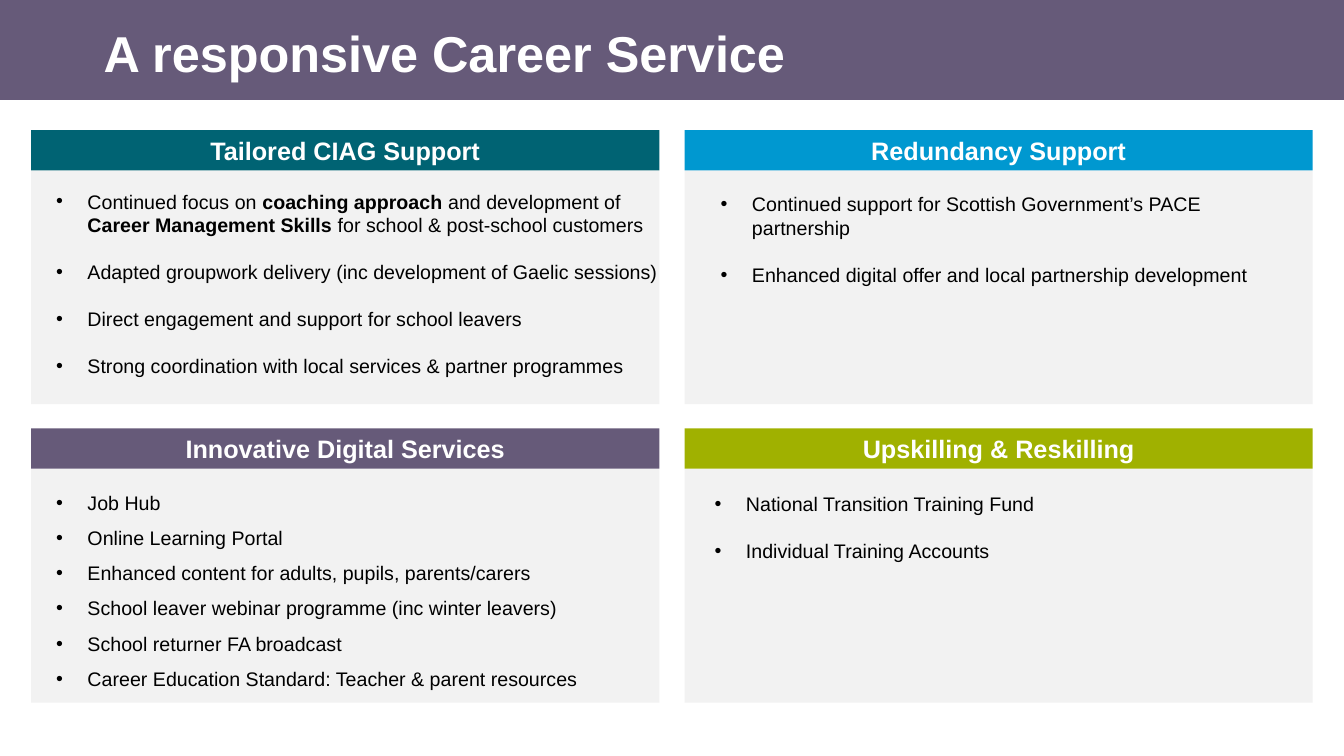
from dataclasses import dataclass
from pptx import Presentation
from pptx.dml.color import RGBColor
from pptx.enum.shapes import MSO_SHAPE
from pptx.enum.text import MSO_ANCHOR, PP_ALIGN
from pptx.oxml.xmlchemy import OxmlElement
from pptx.util import Inches, Pt


@dataclass(frozen=True)
class Theme:
    font: str = "Arial"
    title: int = 36
    head: int = 18
    body: int = 14
    gap: float = 16.8
    purple: str = "665A79"
    teal: str = "006373"
    blue: str = "0098D0"
    green: str = "A0B100"
    pale: str = "F2F2F2"
    white: str = "FFFFFF"
    black: str = "000000"


THEME = Theme()
WIDE, HEAD, BODY = 6.23, 0.4, 2.32
COLS, ROWS = (0.31, 6.79), (1.29, 4.25)
INDENT = Inches(0.31)
GAPPED = {"space_after": Pt(THEME.gap)}
LOOSE = {"line_spacing": 1.5}

PANELS = [
    (0, 0, "Tailored CIAG Support", THEME.teal, (0.46, 1.83, 6.33, 2.52), GAPPED, [
        "Continued focus on *coaching approach* and development of \n"
        "*Career Management Skills* for school & post-school customers",
        "Adapted groupwork delivery (inc development of Gaelic sessions)",
        "Direct engagement and support for school leavers",
        "Strong coordination with local services & partner programmes",
    ]),
    (1, 0, "Redundancy Support", THEME.blue, (7.05, 1.86, 5.97, 1.04), GAPPED, [
        "Continued support for Scottish Government’s PACE partnership",
        "Enhanced digital offer and local partnership development",
    ]),
    (0, 1, "Innovative Digital Services", THEME.purple, (0.46, 4.7, 6, 2.18), LOOSE, [
        "Job Hub",
        "Online Learning Portal",
        "Enhanced content for adults, pupils, parents/carers",
        "School leaver webinar programme (inc winter leavers)",
        "School returner FA broadcast",
        "Career Education Standard: Teacher & parent resources",
    ]),
    (1, 1, "Upskilling & Reskilling", THEME.green, (6.99, 4.83, 3.81, 0.81), GAPPED, [
        "National Transition Training Fund",
        "Individual Training Accounts",
    ]),
]


def style(item, values):
    for name, value in values.items():
        setattr(item, name, value)


def add_run(para, text, size, color, bold):
    run = para.add_run()
    run.text = text
    style(run.font, {"name": THEME.font, "size": Pt(size), "bold": bold})
    run.font.color.rgb = RGBColor.from_string(color)


def add_rect(slide, area, color):
    rect = slide.shapes.add_shape(MSO_SHAPE.RECTANGLE, *map(Inches, area))
    rect.shadow.inherit = False
    rect.fill.solid()
    rect.fill.fore_color.rgb = RGBColor.from_string(color)
    rect.line.fill.background()
    return rect


def add_text(slide, area, wrap):
    frame = slide.shapes.add_textbox(*map(Inches, area)).text_frame
    frame.word_wrap = wrap
    return frame


def add_head(slide, area, text, color):
    frame = add_rect(slide, area, color).text_frame
    style(frame, {"word_wrap": True, "vertical_anchor": MSO_ANCHOR.MIDDLE})
    para = frame.paragraphs[0]
    para.alignment = PP_ALIGN.CENTER
    add_run(para, text, THEME.head, THEME.white, True)


def add_bullet(para):
    props = para._p.get_or_add_pPr()
    for key, value in (("marL", INDENT), ("indent", -INDENT)):
        props.set(key, str(int(value)))
    for tag, key, value in (("a:buFont", "typeface", THEME.font),
                            ("a:buChar", "char", "•")):
        mark = OxmlElement(tag)
        mark.set(key, value)
        props.append(mark)


def add_list(slide, area, items, form):
    frame = add_text(slide, area, True)
    for spot, item in enumerate(items):
        para = frame.add_paragraph() if spot else frame.paragraphs[0]
        style(para, form)
        add_bullet(para)
        for row, line in enumerate(item.split("\n")):
            if row:
                para.add_line_break()
            for part, text in enumerate(line.split("*")):
                if text:
                    add_run(para, text, THEME.body, THEME.black, part % 2 == 1)


def add_panel(slide, col, row, title, color, area, form, items):
    left, top = COLS[col], ROWS[row]
    add_rect(slide, (left, top + HEAD, WIDE, BODY), THEME.pale)
    add_head(slide, (left, top, WIDE, HEAD), title, color)
    add_list(slide, area, items, form)


def main():
    deck = Presentation()
    style(deck, {"slide_width": Inches(13.33), "slide_height": Inches(7.5)})
    slide = deck.slides.add_slide(deck.slide_layouts[6])
    add_rect(slide, (0, 0, 13.33, 0.99), THEME.purple)
    title = add_text(slide, (0.93, 0.17, 7.03, 0.71), False)
    add_run(title.paragraphs[0], "A responsive Career Service",
            THEME.title, THEME.white, True)
    for panel in PANELS:
        add_panel(slide, *panel)
    deck.save("out.pptx")


if __name__ == "__main__":
    main()
